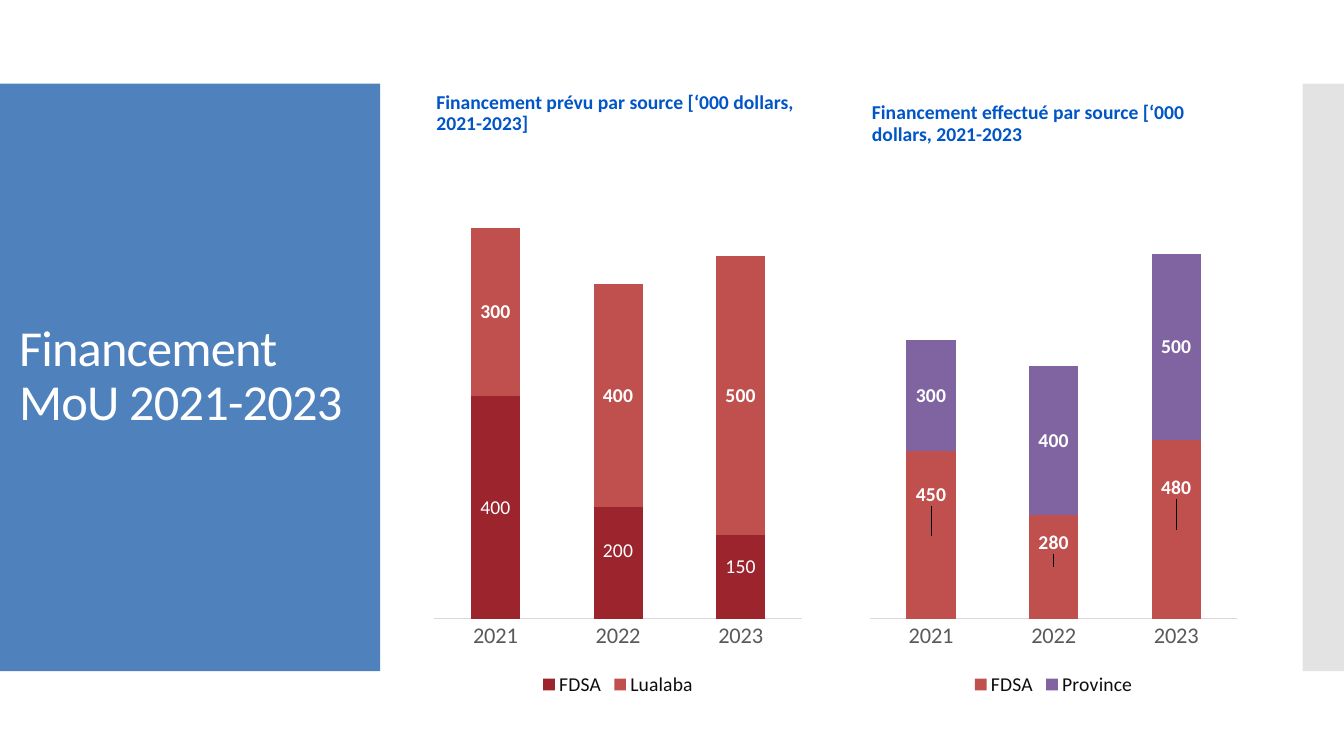
from pptx import Presentation
from pptx.chart.data import CategoryChartData as Data
from pptx.dml.color import RGBColor as RGB
from pptx.enum.chart import XL_CHART_TYPE as Kind, XL_LABEL_POSITION as Pos
from pptx.enum.chart import XL_LEGEND_POSITION as Side, XL_TICK_MARK as Tick
from pptx.enum.shapes import MSO_SHAPE as Form
from pptx.enum.text import MSO_ANCHOR as Anchor
from pptx.oxml import parse_xml
from pptx.oxml.ns import nsdecls, qn
from pptx.util import Inches, Pt


def paint(item, tone):
    if hasattr(item, "solid"):
        item.solid()
        item = item.fore_color
    item.rgb = RGB.from_string(tone)


def style(font, size, tone, bold=False):
    look = {"name": "Calibri", "size": Pt(size), "bold": bold}
    for key, value in look.items():
        setattr(font, key, value)
    paint(font.fill, tone)


deck = Presentation()
deck.slide_width, deck.slide_height = Inches(13.33), Inches(7.5)
slide = deck.slides.add_slide(deck.slide_layouts[6])
shapes = slide.shapes

for left, width, tone in [(0, 3.77, "4F81BD"), (12.92, 0.41, "C8C8C8")]:
    panel = shapes.add_shape(
        Form.RECTANGLE, Inches(left), Inches(0.83), Inches(width), Inches(5.83))
    panel.shadow.inherit = False
    panel.line.fill.background()
    paint(panel.fill, tone)
tint = next(panel.fill.fore_color._xFill.iter(qn("a:srgbClr")))
tint.append(parse_xml(f'<a:alpha {nsdecls("a")} val="50000"/>'))

texts = [
    ("Financement MoU 2021-2023", (0.09, 1.23, 3.41, 5.03),
     36, "FFFFFF", False, Anchor.MIDDLE, 0.05),
    ("Financement prévu par source [‘000 dollars, 2021-2023]",
     (4.23, 0.72, 3.8, 0.88), 14, "0055C8", True, Anchor.BOTTOM, 0.26),
    ("Financement effectué par source [‘000 dollars, 2021-2023",
     (8.55, 0.6, 3.8, 0.89), 14, "0055C8", True, Anchor.BOTTOM, 0.05),
]
for words, place, size, tone, bold, anchor, inset in texts:
    frame = shapes.add_textbox(*map(Inches, place)).text_frame
    look = {"word_wrap": True, "vertical_anchor": anchor,
            "margin_bottom": Inches(inset)}
    for key, value in look.items():
        setattr(frame, key, value)
    para = frame.paragraphs[0]
    para.line_spacing = 0.9
    run = para.add_run()
    run.text = words
    style(run.font, size, tone, bold)
    if size == 36:
        run.font._element.set("spc", "-60")

charts = [
    (4.23, 800, [
        ("FDSA", (400, 200, 150), "9B242D", False, {1: -0.024, 2: -0.02}),
        ("Lualaba", (300, 400, 500), "C0504D", True, {})]),
    (8.55, 1200, [
        ("FDSA", (450, 280, 480), "C0504D", True,
         {0: -0.075, 1: -0.045, 2: -0.078}),
        ("Province", (300, 400, 500), "8064A2", True, {})]),
]
for left, top, rows in charts:
    data = Data()
    data.categories = ["2021", "2022", "2023"]
    for name, values, *rest in rows:
        data.add_series(name, values)
    chart = shapes.add_chart(
        Kind.COLUMN_STACKED, Inches(left), Inches(1.6), Inches(3.8),
        Inches(5.35), data).chart
    style(chart.font, 10, "000000")
    chart.has_title = False
    chart.has_legend = True
    chart.legend.position = Side.BOTTOM
    chart.legend.include_in_layout = False
    style(chart.legend.font, 14, "0D0D0D")

    base = chart.category_axis
    base.major_tick_mark = base.minor_tick_mark = Tick.NONE
    style(base.tick_labels.font, 16, "595959")
    base.format.line.width = Pt(0.75)
    paint(base.format.line.fill, "D9D9D9")
    scale = chart.value_axis
    limits = {"visible": False, "has_major_gridlines": False,
              "minimum_scale": 0, "maximum_scale": top}
    for key, value in limits.items():
        setattr(scale, key, value)

    plot = chart.plots[0]
    plot.gap_width, plot.overlap, plot.vary_by_categories = 150, 100, False
    for series, (name, values, tone, bold, shifts) in zip(plot.series, rows):
        paint(series.format.fill, tone)
        labels = series.data_labels
        labels.show_value = True
        labels.position = Pos.CENTER
        style(labels.font, 14, "FFFFFF", bold)
        for index in shifts:
            label = series.points[index].data_label
            label.position = Pos.CENTER
            style(label.font, 14, "FFFFFF", bold)
        nodes = series._element.iter(qn("c:dLbl"))
        for node, shift in zip(nodes, shifts.values()):
            node[0].addnext(parse_xml(
                f'<c:layout {nsdecls("c")}><c:manualLayout><c:x val="0"/>'
                f'<c:y val="{shift}"/></c:manualLayout></c:layout>'))

deck.save("out.pptx")
